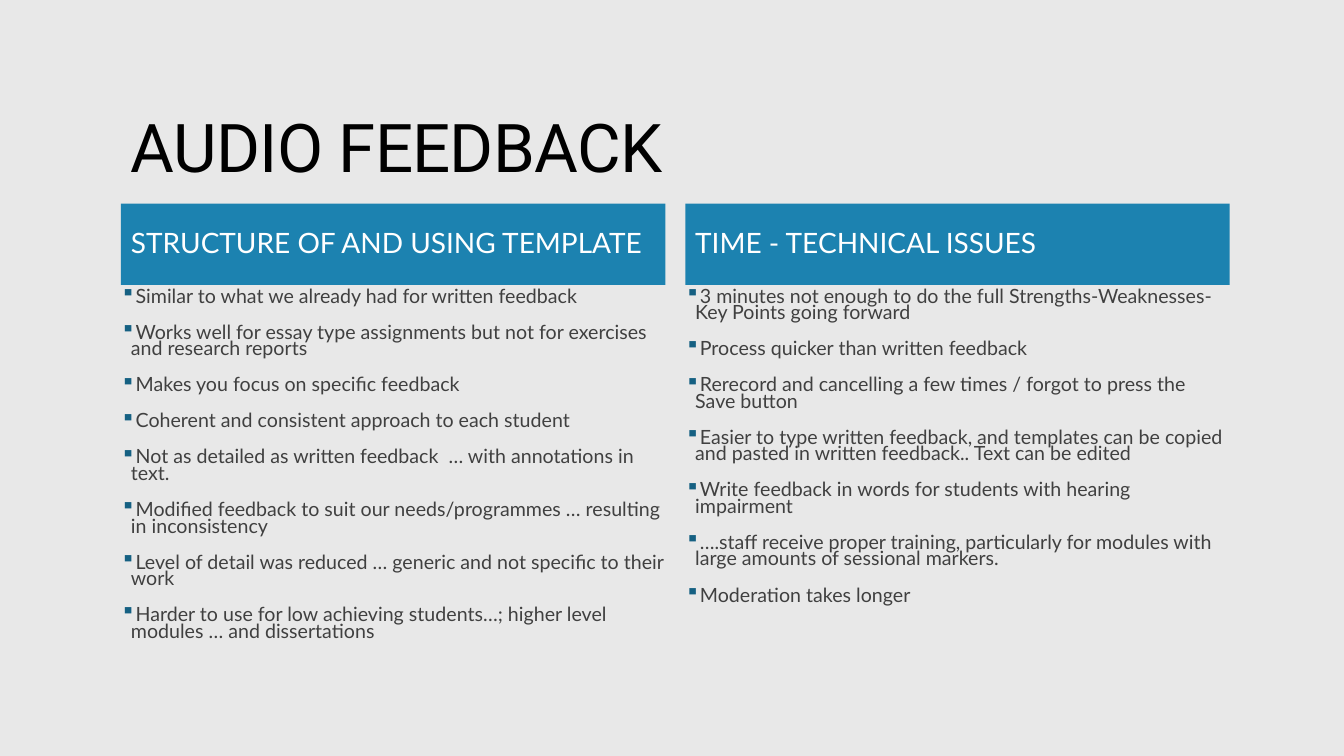
from dataclasses import dataclass

from lxml.etree import SubElement
from pptx import Presentation
from pptx.dml.color import RGBColor
from pptx.enum.shapes import MSO_SHAPE as Shape
from pptx.enum.text import MSO_ANCHOR as Anchor
from pptx.oxml.ns import qn
from pptx.util import Cm, Pt

TOP, WIDE, HEAD = 5.13, 13.72, 2.05


@dataclass
class Column:
    left: float
    tall: float
    head: str
    notes: list[str]


COLUMNS = [
    Column(3.05, 10.54, "STRUCTURE OF AND USING TEMPLATE", [
        "Similar to what we already had for written feedback",
        "Works well for essay type assignments but not for exercises and research reports",
        "Makes you focus on specific feedback",
        "Coherent and consistent approach to each student",
        "Not as detailed as written feedback  … with annotations in text.",
        "Modified feedback to suit our needs/programmes … resulting in inconsistency",
        "Level of detail was reduced … generic and not specific to their work",
        "Harder to use for low achieving students…; higher level modules … and dissertations",
    ]),
    Column(17.27, 9.37, "TIME - TECHNICAL ISSUES", [
        "3 minutes not enough to do the full Strengths-Weaknesses-Key Points going forward",
        "Process quicker than written feedback",
        "Rerecord and cancelling a few times / forgot to press the Save button",
        "Easier to type written feedback, and templates can be copied and pasted in written feedback.. Text can be edited",
        "Write feedback in words for students with hearing impairment",
        "….staff receive proper training, particularly for modules with large amounts of sessional markers.",
        "Moderation takes longer",
    ]),
]


def paint(color, code: str) -> None:
    color.rgb = RGBColor.from_string(code)


def style(para, size: float, face: str, code: str, lines: float) -> None:
    para.line_spacing = lines
    for run in para.runs:
        run.font.size = Pt(size)
        run.font.name = face
        paint(run.font.color, code)


def setup(frame, anchor: Anchor, side: float = 0.25) -> None:
    frame.word_wrap = True
    frame.vertical_anchor = anchor
    frame.margin_left = frame.margin_right = Cm(side)
    frame.margin_top = frame.margin_bottom = Cm(0.13)


def bullet(para) -> None:
    props = para._p.get_or_add_pPr()
    props.set("marL", str(Cm(0.25)))
    props.set("indent", str(Cm(-0.25)))
    tint = SubElement(props, qn("a:buClr"))
    SubElement(tint, qn("a:srgbClr"), val="156082")
    SubElement(props, qn("a:buChar"), char="▪")


def add_title(shapes, text: str) -> None:
    box = shapes.add_textbox(Cm(3.05), Cm(0.79), Cm(27.94), Cm(4.04))
    frame = box.text_frame
    setup(frame, Anchor.BOTTOM)
    frame.text = text
    para = frame.paragraphs[0]
    style(para, 48, "Roboto", "000000", 0.85)
    para.runs[0]._r.get_or_add_rPr().set("spc", "-50")


def add_head(shapes, col: Column) -> None:
    bar = shapes.add_shape(Shape.RECTANGLE, Cm(col.left), Cm(TOP), Cm(WIDE), Cm(HEAD))
    bar.shadow.inherit = False
    bar.fill.solid()
    paint(bar.fill.fore_color, "1C82B0")
    bar.line.fill.background()
    frame = bar.text_frame
    setup(frame, Anchor.MIDDLE)
    frame.text = col.head
    para = frame.paragraphs[0]
    para.alignment = 1
    style(para, 20, "Lato", "FFFFFF", 0.9)


def add_notes(shapes, col: Column) -> None:
    box = shapes.add_textbox(Cm(col.left), Cm(TOP + HEAD), Cm(WIDE), Cm(col.tall))
    frame = box.text_frame
    setup(frame, Anchor.TOP, 0)
    frame.text = "\n".join(col.notes)
    for rank, para in enumerate(frame.paragraphs):
        bullet(para)
        para.space_before = Pt(12 if rank else 0)
        para.space_after = Pt(2)
        style(para, 14, "Lato", "404040", 0.7)


def main() -> None:
    deck = Presentation()
    deck.slide_width, deck.slide_height = Cm(33.87), Cm(19.05)
    slide = deck.slides.add_slide(deck.slide_layouts[6])
    slide.background.fill.solid()
    paint(slide.background.fill.fore_color, "E8E8E8")
    add_title(slide.shapes, "AUDIO FEEDBACK")
    for col in COLUMNS:
        add_head(slide.shapes, col)
        add_notes(slide.shapes, col)
    deck.save("out.pptx")


if __name__ == "__main__":
    main()
